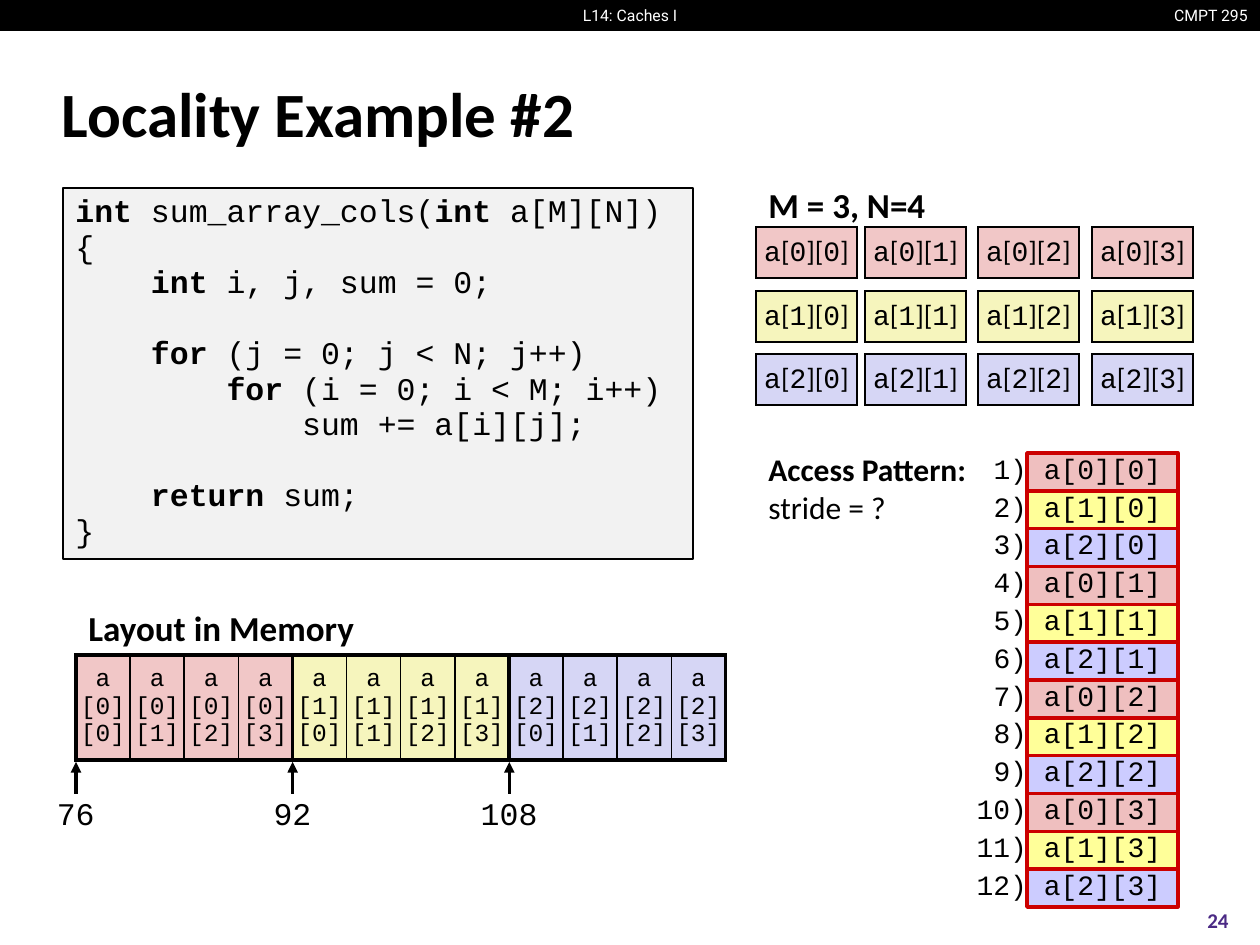
from lxml.etree import SubElement
from pptx import Presentation
from pptx.dml.color import RGBColor
from pptx.enum.shapes import MSO_CONNECTOR, MSO_SHAPE
from pptx.enum.text import MSO_ANCHOR as Anchor, MSO_AUTO_SIZE as AutoSize, PP_ALIGN as Align
from pptx.oxml.ns import qn
from pptx.util import Emu, Pt

EMU_PER_PX = 914400 / 126
SANS, MONO, HEADER_FONT = "Calibri", "Courier New", "Roboto"
BLACK = RGBColor(0x00, 0x00, 0x00)
WHITE = RGBColor(0xFF, 0xFF, 0xFF)
PURPLE = RGBColor(0x4B, 0x2A, 0x85)
RED = RGBColor(0xCC, 0x00, 0x00)
CODE_GREY = RGBColor(0xF2, 0xF2, 0xF2)
ROW_COLORS = [RGBColor(0xF1, 0xC7, 0xC7), RGBColor(0xF6, 0xF5, 0xBD), RGBColor(0xD6, 0xD6, 0xF5)]
ACCESS_COLORS = [RGBColor(0xEF, 0xBF, 0xBF), RGBColor(0xFF, 0xFF, 0x99), RGBColor(0xCC, 0xCC, 0xFF)]
NO_STYLE = "{2D5ABB26-0587-4C30-8999-92F81FD0307C}"

M, N = 3, 4
THIN, THICK = 1, 2.25
CODE_SPACING = 0.94
# Keywords stand between double asterisks.
CODE = """**int** sum_array_cols(**int** a[M][N])
{
    **int** i, j, sum = 0;

    **for** (j = 0; j < N; j++)
        **for** (i = 0; i < M; i++)
            sum += a[i][j];

    **return** sum;
}"""


def px(length):
    return Emu(round(length * EMU_PER_PX))


def px_all(*lengths):
    return [px(length) for length in lengths]


def style(para, size, font=SANS, color=BLACK, bold=False, align=Align.LEFT):
    para.alignment = align
    para.font.size = Pt(size)
    para.font.name = font
    para.font.bold = bold
    para.font.color.rgb = color


def add_label(shapes, text, at, size, wrap=False, anchor=Anchor.TOP, **looks):
    box = shapes.add_textbox(*px_all(*at))
    frame = box.text_frame
    frame.word_wrap = wrap
    frame.vertical_anchor = anchor
    frame.text = text
    for para in frame.paragraphs:
        style(para, size, **looks)
    return box


def add_box(shapes, at, fill, line=None, width=THIN):
    box = shapes.add_shape(MSO_SHAPE.RECTANGLE, *px_all(*at))
    box.shadow.inherit = False
    box.fill.solid()
    box.fill.fore_color.rgb = fill
    if line is None:
        box.line.fill.background()
    else:
        box.line.color.rgb = line
        box.line.width = Pt(width)
    return box


def add_up_arrow(shapes, x, bottom, top):
    arrow = shapes.add_connector(MSO_CONNECTOR.STRAIGHT, *px_all(x, bottom, x, top))
    arrow.line.color.rgb = BLACK
    arrow.line.width = Pt(2)
    SubElement(arrow.line._get_or_add_ln(), qn("a:tailEnd"), type="triangle")
    SubElement(arrow._element.spPr, qn("a:effectLst"))


def add_plain_table(shapes, left, top, columns, rows):
    """Add a table without style, banding or cell margins."""
    frame = shapes.add_table(len(rows), len(columns), *px_all(left, top, sum(columns), sum(rows)))
    table = frame.table
    table.first_row = table.horz_banding = False
    table._tbl.tblPr.find(qn("a:tableStyleId")).text = NO_STYLE
    for column, width in zip(table.columns, columns):
        column.width = px(width)
    for row, height in zip(table.rows, rows):
        row.height = px(height)
    for cell in table.iter_cells():
        cell.margin_left = cell.margin_right = cell.margin_top = cell.margin_bottom = 0
        cell.vertical_anchor = Anchor.MIDDLE
        cell.fill.background()
    return table


def fill_cell(cell, color):
    cell.fill.solid()
    cell.fill.fore_color.rgb = color


def set_borders(cell, left, right, top, bottom):
    """Draw black borders of the given widths in points."""
    properties = cell._tc.get_or_add_tcPr()
    for index, (side, width) in enumerate(zip("LRTB", (left, right, top, bottom))):
        line = SubElement(properties, qn(f"a:ln{side}"), w=str(Pt(width)))
        SubElement(SubElement(line, qn("a:solidFill")), qn("a:srgbClr"), val=str(BLACK))
        properties.insert(index, line)


def add_header(shapes):
    add_box(shapes, (0, 0, 1260, 31), BLACK)
    looks = dict(size=9, font=HEADER_FONT, color=WHITE)
    add_label(shapes, "CMPT 295", (1158, 0, 102, 31), align=Align.RIGHT, **looks)
    add_label(shapes, "L14: Caches I", (568, 0, 124, 31), align=Align.CENTER, **looks)


def set_title(title, text):
    title.left, title.top, title.width, title.height = px_all(49, 60, 1158, 105)
    frame = title.text_frame
    frame.text = text
    frame.auto_size = AutoSize.NONE
    frame.vertical_anchor = Anchor.MIDDLE
    style(frame.paragraphs[0], 36, bold=True)


def add_code(shapes):
    frame = add_box(shapes, (63, 188, 630, 371), CODE_GREY, BLACK).text_frame
    frame.word_wrap = True
    frame.vertical_anchor = Anchor.TOP
    for index, line in enumerate(CODE.split("\n")):
        para = frame.add_paragraph() if index else frame.paragraphs[0]
        style(para, 18, MONO)
        para.line_spacing = CODE_SPACING
        for part, text in enumerate(line.split("**")):
            if text:
                span = para.add_run()
                span.text = text
                span.font.bold = part % 2 == 1


def add_memory_layout(shapes):
    left, width = 76, 650 / (M * N)
    add_label(shapes, "Layout in Memory", (76, 600, 294, 55), 20, bold=True)
    table = add_plain_table(shapes, left, 655, [width] * (M * N), [105])
    for index in range(M * N):
        row, column = divmod(index, N)
        cell = table.cell(0, index)
        cell.text = f"a [{row}] [{column}]"
        style(cell.text_frame.paragraphs[0], 14, MONO, align=Align.CENTER)
        fill_cell(cell, ROW_COLORS[row])
        set_borders(cell, THICK if column == 0 else THIN,
                    THICK if column == N - 1 else THIN, THICK, THICK)

    addresses = shapes.add_group_shape().shapes
    for row, (address, label_width) in enumerate([("76", 63), ("92", 63), ("108", 82)]):
        x = left + row * N * width
        add_up_arrow(shapes, x, 794, 762)
        add_label(addresses, address, (x - label_width / 2, 788, label_width, 51), 18, font=MONO)


def add_array_grid(shapes):
    add_label(shapes, "M = 3, N=4", (756, 177, 184, 55), 20, bold=True)
    table = add_plain_table(shapes, 756, 227, [101, 8, 101, 12, 101, 13, 101], [51, 13, 51, 12, 51])
    for cell in table.iter_cells():
        SubElement(cell.text_frame.paragraphs[0]._p, qn("a:endParaRPr"), sz="100")
    for row in range(M):
        for column in range(N):
            cell = table.cell(2 * row, 2 * column)
            para = cell.text_frame.paragraphs[0]
            style(para, 16, MONO, align=Align.CENTER)
            for part, text in enumerate(("a", "[", str(row), "][", str(column), "]")):
                span = para.add_run()
                span.text = text
                span.font.name = SANS if part % 2 else MONO
            fill_cell(cell, ROW_COLORS[row])
            set_borders(cell, THIN, THIN, THIN, THIN)


def add_access_pattern(shapes):
    top, height = 453, 454 / (M * N)
    bars = shapes.add_group_shape().shapes
    label = add_label(shapes, "Access Pattern:\nstride = ?", (756, 444, 226, 89), 18)
    label.text_frame.paragraphs[0].font.bold = True
    table = add_plain_table(shapes, 964, top, [63, 151], [height] * (M * N))
    for index in range(M * N):
        column, row = divmod(index, M)
        add_box(bars, (1027, top + index * height, 151, height), ACCESS_COLORS[row], RED, 2)
        texts = (f"{index + 1})", f"a[{row}][{column}]")
        for place, (text, align) in enumerate(zip(texts, (Align.RIGHT, Align.CENTER))):
            cell = table.cell(index, place)
            cell.text = text
            style(cell.text_frame.paragraphs[0], 16, MONO, align=align)


def main():
    deck = Presentation()
    deck.slide_width, deck.slide_height = px_all(1260, 945)
    page = deck.slides.add_slide(deck.slide_layouts[5])
    add_header(page.shapes)
    set_title(page.shapes.title, "Locality Example #2")
    add_label(page.shapes, "24", (1176, 895, 84, 50), 12, wrap=True, anchor=Anchor.MIDDLE,
              color=PURPLE, bold=True, align=Align.CENTER)
    add_code(page.shapes)
    add_memory_layout(page.shapes)
    add_array_grid(page.shapes)
    add_access_pattern(page.shapes)
    deck.save("out.pptx")


if __name__ == "__main__":
    main()
